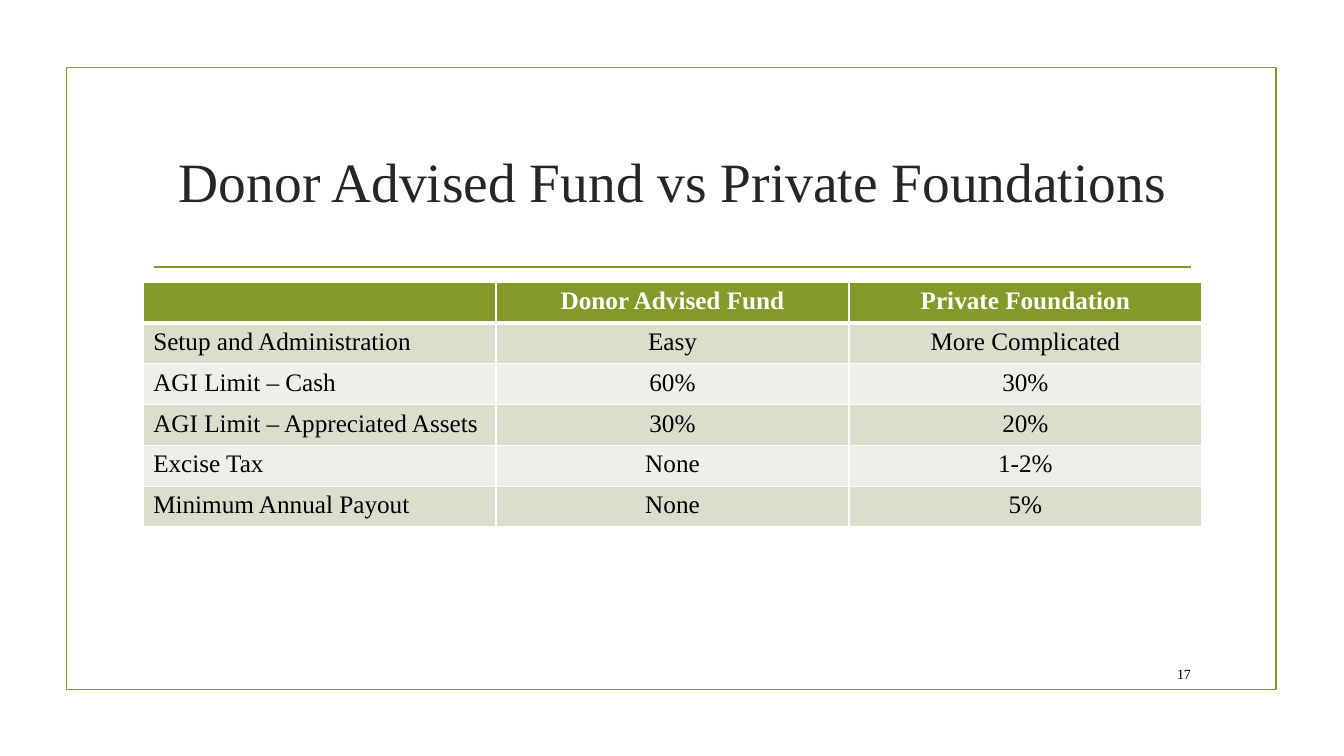
from lxml.etree import SubElement
from pptx import Presentation
from pptx.dml.color import RGBColor
from pptx.enum.shapes import MSO_CONNECTOR, MSO_SHAPE
from pptx.enum.text import MSO_ANCHOR, PP_ALIGN
from pptx.oxml.ns import qn
from pptx.util import Emu, Pt

EMU_PER_PX = 9144
FONT = "Times New Roman"
GREEN, WHITE, BLACK, TITLE_GREY = "83992A", "FFFFFF", "000000", "262626"
BANDS = ["D9DECD", "EDEFE8"]
ROWS = [
    ["", "Donor Advised Fund", "Private Foundation"],
    ["Setup and Administration", "Easy", "More Complicated"],
    ["AGI Limit – Cash", "60%", "30%"],
    ["AGI Limit – Appreciated Assets", "30%", "20%"],
    ["Excise Tax", "None", "1-2%"],
    ["Minimum Annual Payout", "None", "5%"],
]


def px(length):
    """Turn a length in px into EMU."""
    return Emu(round(length * EMU_PER_PX))


def place(box):
    """Turn a px box into EMU lengths."""
    return [px(length) for length in box]


def color(value):
    """Turn a hex string into a colour."""
    return RGBColor.from_string(value)


def write(text_frame, text, size, text_color, alignment, bold=False):
    """Write one formatted paragraph."""
    text_frame.text = text
    paragraph = text_frame.paragraphs[0]
    paragraph.alignment = alignment
    for font in [paragraph.font] + [run.font for run in paragraph.runs]:
        font.name, font.size, font.bold = FONT, Pt(size), bold
        font.color.rgb = color(text_color)


def add_frame(slide, box):
    """Draw the outline around the slide content."""
    frame = slide.shapes.add_shape(MSO_SHAPE.RECTANGLE, *place(box))
    frame.shadow.inherit = False
    frame.fill.background()
    frame.line.color.rgb = color(GREEN)
    frame.line.width = Pt(1.25)


def add_title(slide, box, text):
    """Place the title and the rule beneath it."""
    left, top, width, height = box
    title = slide.shapes.title
    title.left, title.top, title.width, title.height = place(box)
    title.text_frame.word_wrap = True
    title.text_frame.vertical_anchor = MSO_ANCHOR.MIDDLE
    write(title.text_frame, text, 39.6, TITLE_GREY, PP_ALIGN.CENTER)
    inset, rule_top = 11, top + height + 15
    rule = slide.shapes.add_connector(
        MSO_CONNECTOR.STRAIGHT,
        *place([left + inset, rule_top, left + width - inset, rule_top]))
    rule.line.color.rgb = color(GREEN)
    rule.line.width = Pt(1.25)
    SubElement(rule._element.spPr, qn("a:effectLst"))


def add_borders(cell, top, bottom):
    """Give a cell white borders, with top and bottom widths in points."""
    properties = cell._tc.get_or_add_tcPr()
    for side, width in {"L": 1, "R": 1, "T": top, "B": bottom}.items():
        line = SubElement(properties, qn(f"a:ln{side}"), w=str(Pt(width)))
        fill = SubElement(line, qn("a:solidFill"))
        SubElement(fill, qn("a:srgbClr"), val=WHITE)


def add_comparison(slide, box, rows):
    """Fill the box with the banded comparison table."""
    table = slide.shapes.add_table(len(rows), len(rows[0]), *place(box)).table
    for row_index, row in enumerate(rows):
        header = row_index == 0
        for column_index, text in enumerate(row):
            cell = table.cell(row_index, column_index)
            add_borders(cell, 3 if row_index == 1 else 1, 3 if header else 1)
            cell.fill.solid()
            cell.fill.fore_color.rgb = color(
                GREEN if header else BANDS[(row_index - 1) % 2])
            alignment = PP_ALIGN.CENTER if column_index else PP_ALIGN.LEFT
            write(cell.text_frame, text, 18, WHITE if header else BLACK,
                  alignment, header)


def add_page_number(slide, box, number):
    """Place the page number at the right of its box."""
    text_frame = slide.shapes.add_textbox(*place(box)).text_frame
    text_frame.word_wrap = True
    text_frame.vertical_anchor = MSO_ANCHOR.MIDDLE
    write(text_frame, number, 10, BLACK, PP_ALIGN.RIGHT)


def main():
    """Build the slide and save it."""
    presentation = Presentation()
    presentation.slide_width, presentation.slide_height = px(1333), px(750)
    slide = presentation.slides.add_slide(presentation.slide_layouts[5])
    add_frame(slide, [66, 67, 1200, 617])
    add_title(slide, [142, 107, 1050, 143],
              "Donor Advised Fund vs Private Foundations")
    add_comparison(slide, [142, 280, 1050, 243], ROWS)
    add_page_number(slide, [1132, 653, 59, 31], "17")
    presentation.save("out.pptx")


if __name__ == "__main__":
    main()
